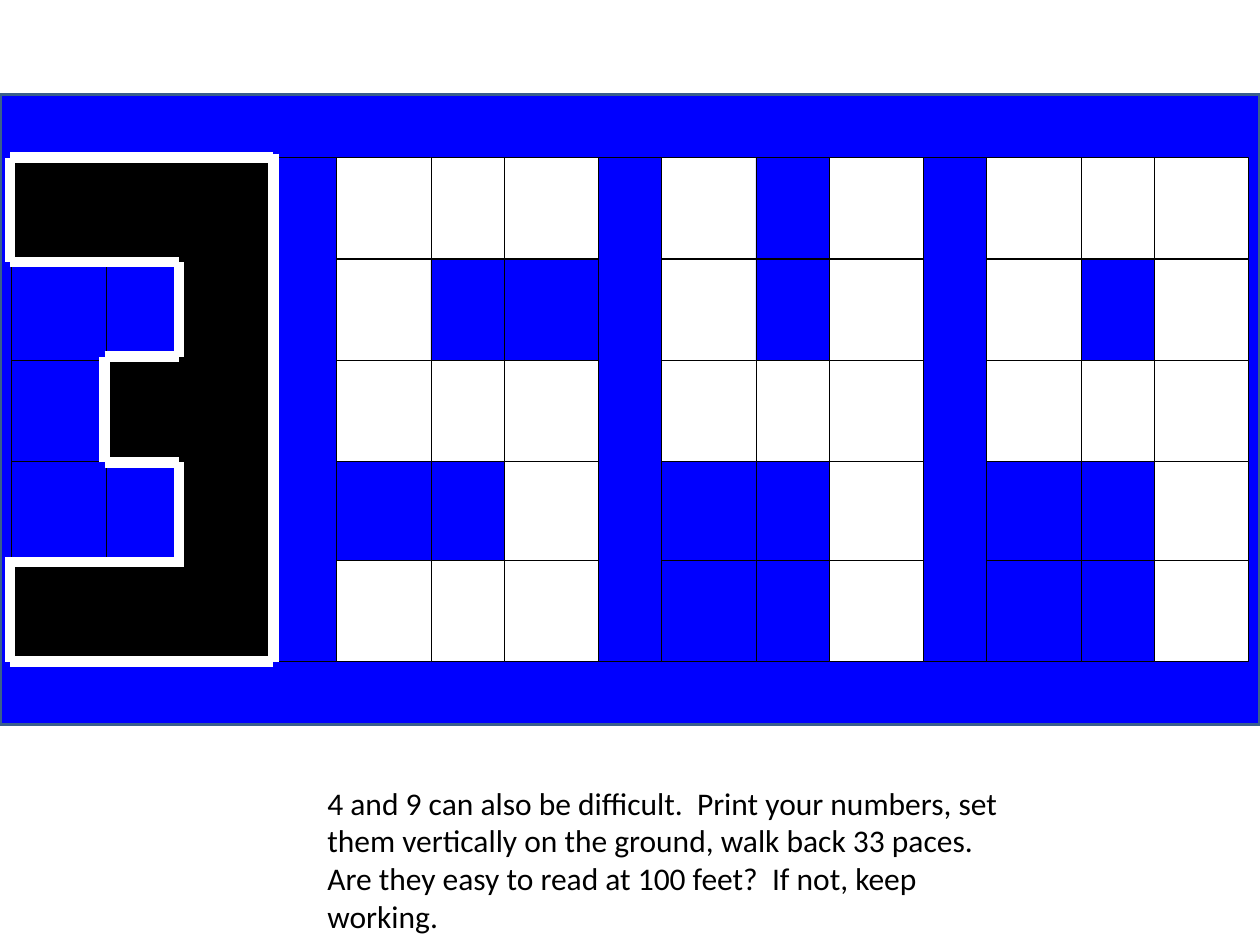
from lxml import etree
from pptx import Presentation, util as u
from pptx.dml.color import RGBColor
from pptx.enum import shapes, text
from pptx.oxml.ns import qn

# Content: "#" is a lit cell of the digit, "." is background
THREE = ["###", "..#", ".##", "..#", "###"]
WHITE_DIGITS = [
    ["###", "#..", "###", "..#", "###"],  # 5
    ["#.#", "#.#", "###", "..#", "..#"],  # 4
    ["###", "#.#", "###", "..#", "..#"],  # 9
]
ADVICE = ("4 and 9 can also be difficult.  Print your numbers, set them "
          "vertically on the ground, walk back 33 paces.  Are they easy to "
          "read at 100 feet?  If not, keep working.")

THEME = {
    "blue": "0000FF", "white": "FFFFFF", "black": "000000", "frame": "3A5F8C",
    "font": "Calibri", "size": 18, "hairline": 0.25, "border": 2, "outline": 6,
}

# Layout in inches
DIGIT_LEFT, DIGIT_PITCH = 0.09, 2.58
COLUMNS = [(0, 0.75), (0.75, 0.6), (1.33, 0.75)]  # offset, width
ROWS = [1.25, 2.06, 2.86, 3.66, 4.45]
CELL_HEIGHT = 0.8
GAP_WIDTH = 0.5
THREE_OUTLINE = [  # x1, y1, x2, y2
    (0.08, 1.25, 2.17, 1.25), (0.08, 1.25, 0.08, 2.08),
    (0.08, 2.08, 1.42, 2.08), (1.42, 2.83, 1.42, 2.08),
    (0.83, 2.83, 1.42, 2.83), (0.83, 3.67, 1.42, 3.67),
    (0.83, 3.67, 0.83, 2.83), (1.42, 4.5, 1.42, 3.67),
    (0.08, 5.25, 2.17, 5.25), (0.08, 4.42, 0.08, 5.25),
    (0.08, 4.46, 1.42, 4.46), (2.17, 1.22, 2.17, 5.25),
]


def color(name):
    return RGBColor.from_string(THEME[name])


def add_block(slide, box, fill, line="black", weight="hairline"):
    block = slide.shapes.add_shape(
        shapes.MSO_SHAPE.RECTANGLE, *map(u.Inches, box))
    block.shadow.inherit = False
    block.fill.solid()
    block.fill.fore_color.rgb = color(fill)
    block.line.color.rgb = color(line)
    block.line.width = u.Pt(THEME[weight])


def add_digit(slide, left, pattern, lit):
    for column, (offset, width) in enumerate(COLUMNS):
        for top, cells in zip(ROWS, pattern):
            fill = lit if cells[column] == "#" else "blue"
            add_block(slide, (left + offset, top, width, CELL_HEIGHT), fill)


def add_stroke(slide, ends):
    stroke = slide.shapes.add_connector(
        shapes.MSO_CONNECTOR.STRAIGHT, *map(u.Inches, ends))
    stroke.line.color.rgb = color("white")
    stroke.line.width = u.Pt(THEME["outline"])
    etree.SubElement(stroke._element.spPr, qn("a:effectLst"))


def add_text(slide, words, box, size=THEME["size"], ink="black"):
    frame = slide.shapes.add_textbox(*map(u.Inches, box)).text_frame
    frame.word_wrap = True
    frame.auto_size = text.MSO_AUTO_SIZE.SHAPE_TO_FIT_TEXT
    run = frame.paragraphs[0].add_run()
    run.text = words
    run.font.name = THEME["font"]
    run.font.size = u.Pt(size)
    run.font.color.rgb = color(ink)


def main():
    deck = Presentation()
    deck.slide_width, deck.slide_height = u.Inches(10), u.Inches(7.5)
    slide = deck.slides.add_slide(deck.slide_layouts[6])

    # Number plate with a blue gap before each white digit
    add_block(slide, (0, 0.75, 10, 5), "blue", line="frame", weight="border")
    for place, pattern in enumerate(WHITE_DIGITS, start=1):
        left = DIGIT_LEFT + place * DIGIT_PITCH
        add_block(slide, (left - GAP_WIDTH, ROWS[0], GAP_WIDTH, 4), "blue")
        add_digit(slide, left, pattern, "white")

    # Black digit with its white outline
    add_digit(slide, DIGIT_LEFT, THREE, "black")
    for ends in THREE_OUTLINE:
        add_stroke(slide, ends)

    # Advice
    add_text(slide, ADVICE, (2.5, 6.17, 5.67, 1.31))
    deck.save("out.pptx")


if __name__ == "__main__":
    main()
